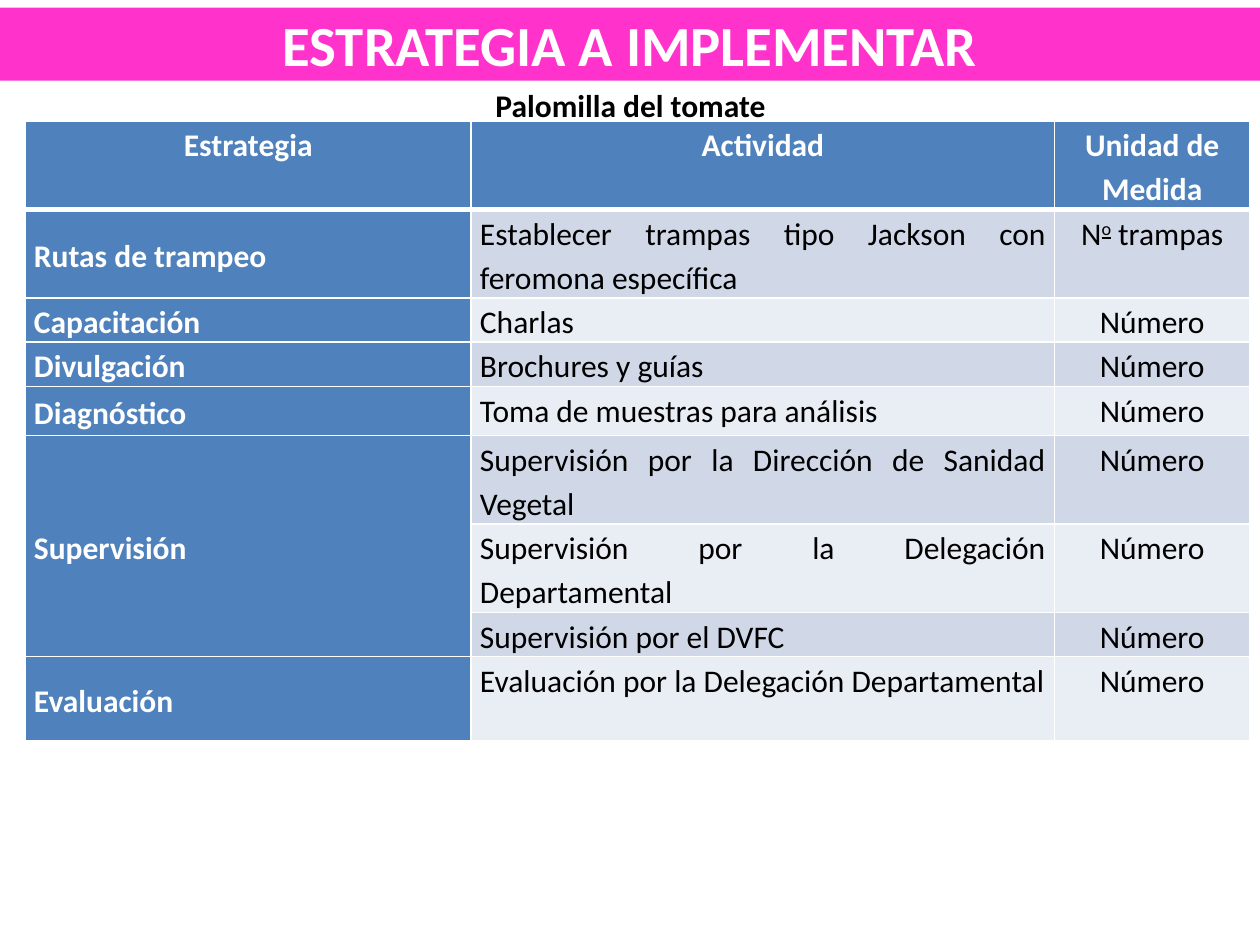
from dataclasses import dataclass

from lxml import etree
from pptx import Presentation
from pptx import util as u
from pptx.dml.color import RGBColor
from pptx.enum import shapes, text
from pptx.oxml import ns


@dataclass
class Theme:
    font: str = "Calibri"
    big: float = 32.4
    body: float = 18
    pink: str = "FF33CC"
    blue: str = "4F81BD"
    bands: tuple = ("D0D8E8", "E9EDF4")
    white: str = "FFFFFF"
    black: str = "000000"


LEFT, MID = text.PP_ALIGN.JUSTIFY, text.PP_ALIGN.CENTER


class Deck:
    def __init__(self, theme):
        self.theme = theme
        self.prs = Presentation()
        self.prs.slide_width, self.prs.slide_height = u.Inches(10), u.Inches(7.5)
        self.slide = self.prs.slides.add_slide(self.prs.slide_layouts[6])

    def place(self, x, y, w, h):
        """Turn shares of the slide's size into lengths."""
        wide, high = self.prs.slide_width, self.prs.slide_height
        return [round(n) for n in (x * wide, y * high, w * wide, h * high)]

    def style(self, para, size, color, bold, align=MID):
        para.alignment = align
        for run in para.runs:
            font = run.font
            font.name, font.size, font.bold = self.theme.font, u.Pt(size), bold
            font.color.rgb = RGBColor.from_string(color)

    def banner(self, words, box):
        shape = self.slide.shapes.add_shape(
            shapes.MSO_SHAPE.RECTANGLE, *self.place(*box))
        shape.shadow.inherit = False
        shape.fill.solid()
        shape.fill.fore_color.rgb = RGBColor.from_string(self.theme.pink)
        shape.line.fill.background()
        frame = shape.text_frame
        frame.text = words
        frame.vertical_anchor = text.MSO_ANCHOR.MIDDLE
        self.style(frame.paragraphs[0], self.theme.big, self.theme.white, True)

    def label(self, words, box):
        frame = self.slide.shapes.add_textbox(*self.place(*box)).text_frame
        frame.word_wrap = True
        frame.auto_size = text.MSO_AUTO_SIZE.SHAPE_TO_FIT_TEXT
        frame.text = words
        self.style(frame.paragraphs[0], self.theme.body, self.theme.black, True)

    def edges(self, cell, row):
        props = cell._tc.get_or_add_tcPr()
        for side in "LRTB":
            thick = (row, side) in ((0, "B"), (1, "T"))
            line = etree.SubElement(props, ns.qn(f"a:ln{side}"),
                                    w=str(u.Pt(3 if thick else 1)))
            fill = etree.SubElement(line, ns.qn("a:solidFill"))
            etree.SubElement(fill, ns.qn("a:srgbClr"), val=self.theme.white)

    def cell(self, cell, words, row, col):
        theme = self.theme
        head, side = row == 0, col == 0
        strong = head or side
        self.edges(cell, row)
        cell.fill.solid()
        cell.fill.fore_color.rgb = RGBColor.from_string(
            theme.blue if strong else theme.bands[(row - 1) % 2])
        cell.margin_left = cell.margin_right = u.Inches(0.07)
        cell.margin_top = cell.margin_bottom = 0
        if side and not head:
            cell.vertical_anchor = text.MSO_ANCHOR.MIDDLE
        para = cell.text_frame.paragraphs[0]
        para.line_spacing = 1.15
        # A caret pair encloses a raised, underlined part
        for i, part in enumerate(words.split("^")):
            run = para.add_run()
            run.text = part
            if i % 2:
                run.font.underline = True
                run._r.get_or_add_rPr().set("baseline", "30000")
        self.style(para, theme.body, theme.white if strong else theme.black,
                   strong, MID if head or col == 2 else LEFT)

    def table(self, rows, box, cols, highs):
        frame = self.slide.shapes.add_table(
            len(rows), len(cols), *self.place(*box))
        grid = frame.table
        for col, wide in zip(grid.columns, cols):
            col.width = u.Inches(wide)
        for row, high in zip(grid.rows, highs):
            row.height = u.Inches(high)
        frame.height = self.place(*box)[3]
        for r, row in enumerate(rows):
            for c, words in enumerate(row):
                self.cell(grid.cell(r, c), words, r, c)
        # An empty first column continues the cell above
        start = 0
        for r in range(1, len(rows) + 1):
            if r == len(rows) or rows[r][0]:
                if r - start > 1:
                    grid.cell(start, 0).merge(grid.cell(r - 1, 0))
                start = r


ROWS = [
    ("Estrategia", "Actividad", "Unidad de Medida"),
    ("Rutas de trampeo",
     "Establecer trampas tipo Jackson con feromona específica",
     "N^o^ trampas"),
    ("Capacitación", "Charlas", "Número"),
    ("Divulgación", "Brochures y guías", "Número"),
    ("Diagnóstico", "Toma de muestras para análisis", "Número"),
    ("Supervisión", "Supervisión por la Dirección de Sanidad Vegetal", "Número"),
    ("", "Supervisión por la Delegación Departamental", "Número"),
    ("", "Supervisión por el DVFC", "Número"),
    ("Evaluación", "Evaluación por la Delegación Departamental", "Número"),
]
COLS = (3.54, 4.63, 1.55)
HIGHS = (0.48, 0.27, 0.34, 0.31, 0.39, 0.48, 0.67, 0.31, 0.67)


def main():
    deck = Deck(Theme())
    # Title band
    deck.banner("ESTRATEGIA A IMPLEMENTAR", (0, 0.06 / 7.5, 1, 0.58 / 7.5))
    # Strategy table
    deck.table(ROWS, (0.02, 0.96 / 7.5, 0.972, 4.74 / 7.5), COLS, HIGHS)
    # Table caption
    deck.label("Palomilla del tomate", (0.028, 0.63 / 7.5, 0.945, 0.4 / 7.5))
    deck.prs.save("out.pptx")


if __name__ == "__main__":
    main()
